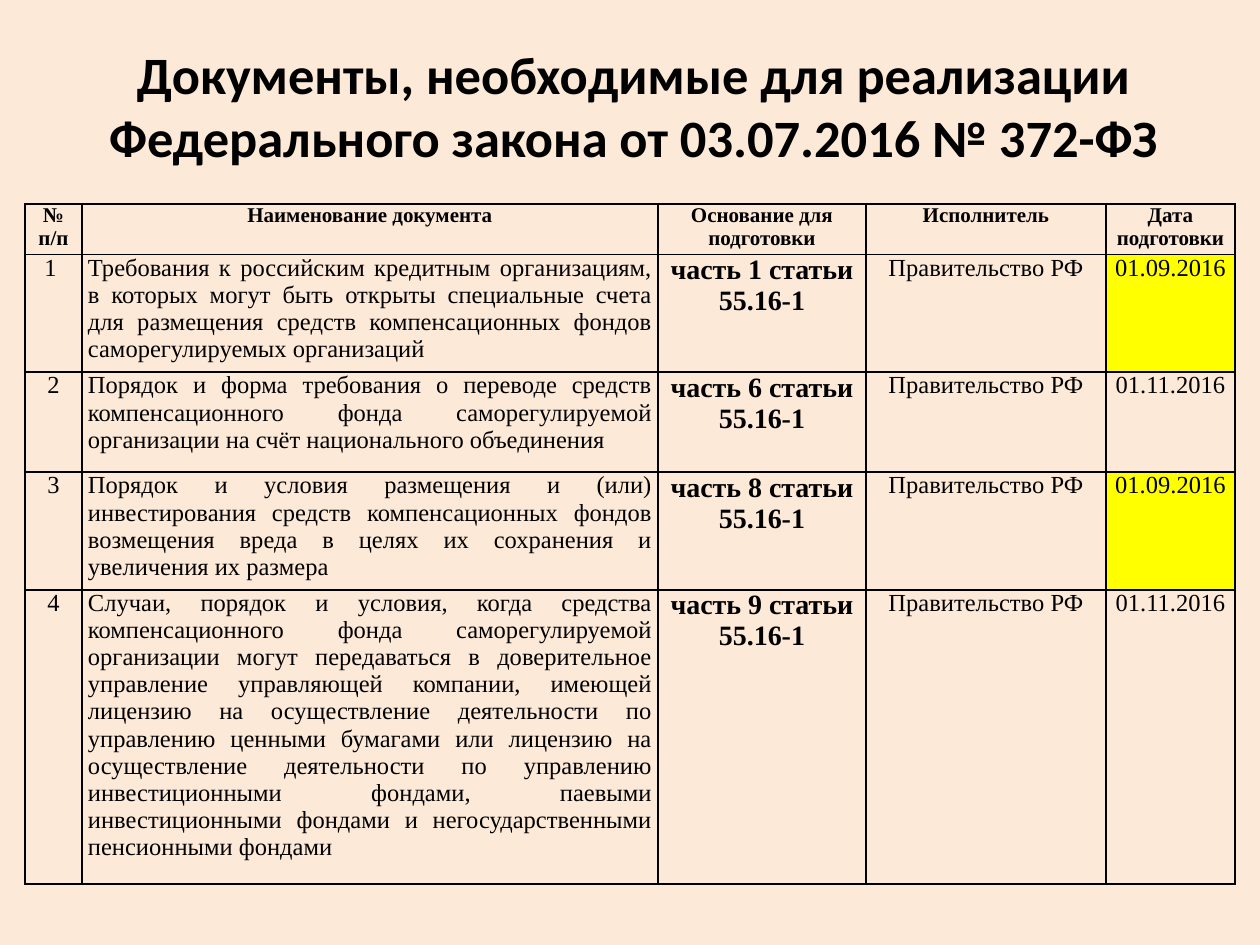
from lxml import etree
from pptx import Presentation
from pptx import util as u
from pptx.dml.color import RGBColor
from pptx.enum import text
from pptx.oxml.ns import qn

# Content
TITLE = "Документы, необходимые для реализации Федерального закона от 03.07.2016 №\u00a0372-ФЗ"
HEADER = ["№ п/п", "Наименование документа", "Основание для подготовки",
          "Исполнитель", "Дата подготовки"]
# number, document, part of the article, date
DOCUMENTS = [
    ("1 ", "Требования к российским кредитным организациям, в которых могут быть открыты "
     "специальные счета для размещения средств компенсационных фондов "
     "саморегулируемых организаций", 1, "01.09.2016"),
    ("2", "Порядок и форма требования о переводе средств компенсационного фонда "
     "саморегулируемой организации на счёт национального объединения", 6, "01.11.2016"),
    ("3", "Порядок и условия размещения и (или) инвестирования средств компенсационных "
     "фондов возмещения вреда в целях их сохранения и увеличения их размера",
     8, "01.09.2016"),
    ("4", "Случаи, порядок и условия, когда средства компенсационного фонда "
     "саморегулируемой организации могут передаваться в доверительное управление "
     "управляющей компании, имеющей лицензию на осуществление деятельности по "
     "управлению ценными бумагами или лицензию на осуществление деятельности по "
     "управлению инвестиционными фондами, паевыми инвестиционными фондами и "
     "негосударственными пенсионными фондами", 9, "01.11.2016"),
]
EXECUTOR = "Правительство РФ"
URGENT_DATE = "01.09.2016"
COLS = [57, 576, 208, 240, 129]
ROWS = [46, 117, 100, 117, 273]
NAME_COL, BASIS_COL = 1, 2
BLACK, YELLOW, PEACH = "000000", "FFFF00", "FDE9D8"


def px(n):
    return u.Emu(round(n * 914400 / 126))


def rgb(value):
    return RGBColor.from_string(value)


def write(tf, words, font, size, bold, align=text.PP_ALIGN.CENTER):
    p = tf.paragraphs[0]
    p.alignment = align
    r = p.add_run()
    r.text = words
    r.font.name, r.font.size, r.font.bold = font, u.Pt(size), bold
    r.font.color.rgb = rgb(BLACK)


def add_borders(cell):
    tcPr = cell._tc.get_or_add_tcPr()
    for i, side in enumerate(("a:lnL", "a:lnR", "a:lnT", "a:lnB")):
        ln = etree.Element(qn(side), w=str(u.Pt(1)))
        fill = etree.SubElement(ln, qn("a:solidFill"))
        etree.SubElement(fill, qn("a:srgbClr"), val=BLACK)
        tcPr.insert(i, ln)


prs = Presentation()
prs.slide_width, prs.slide_height = u.Inches(10), u.Inches(7.5)
s = prs.slides.add_slide(prs.slide_layouts[6])
s.background.fill.solid()
s.background.fill.fore_color.rgb = rgb(PEACH)

# Title
tf = s.shapes.add_textbox(px(54), px(36), px(1160), px(110)).text_frame
tf.word_wrap = True
tf.vertical_anchor = text.MSO_ANCHOR.TOP
write(tf, TITLE, "Calibri", 30, True)

# Table of documents
rows = [HEADER] + [[num, name, f"часть {part} статьи 55.16-1", EXECUTOR, date]
                   for num, name, part, date in DOCUMENTS]
table = s.shapes.add_table(len(ROWS), len(COLS), px(25), px(204),
                           px(sum(COLS)), px(sum(ROWS))).table
for col, width in zip(table.columns, COLS):
    col.width = px(width)
for row, height in zip(table.rows, ROWS):
    row.height = px(height)

for i, row in enumerate(rows):
    for j, words in enumerate(row):
        cell = table.cell(i, j)
        cell.margin_left = cell.margin_right = px(6)
        cell.margin_top = cell.margin_bottom = 0
        if words == URGENT_DATE:
            cell.fill.solid()
            cell.fill.fore_color.rgb = rgb(YELLOW)
        else:
            cell.fill.background()
        add_borders(cell)
        header, basis = i == 0, j == BASIS_COL
        size = 12 if header else 16 if basis else 14
        justified = j == NAME_COL and not header
        align = text.PP_ALIGN.JUSTIFY if justified else text.PP_ALIGN.CENTER
        write(cell.text_frame, words, "Times New Roman", size, header or basis, align)

prs.save("out.pptx")
